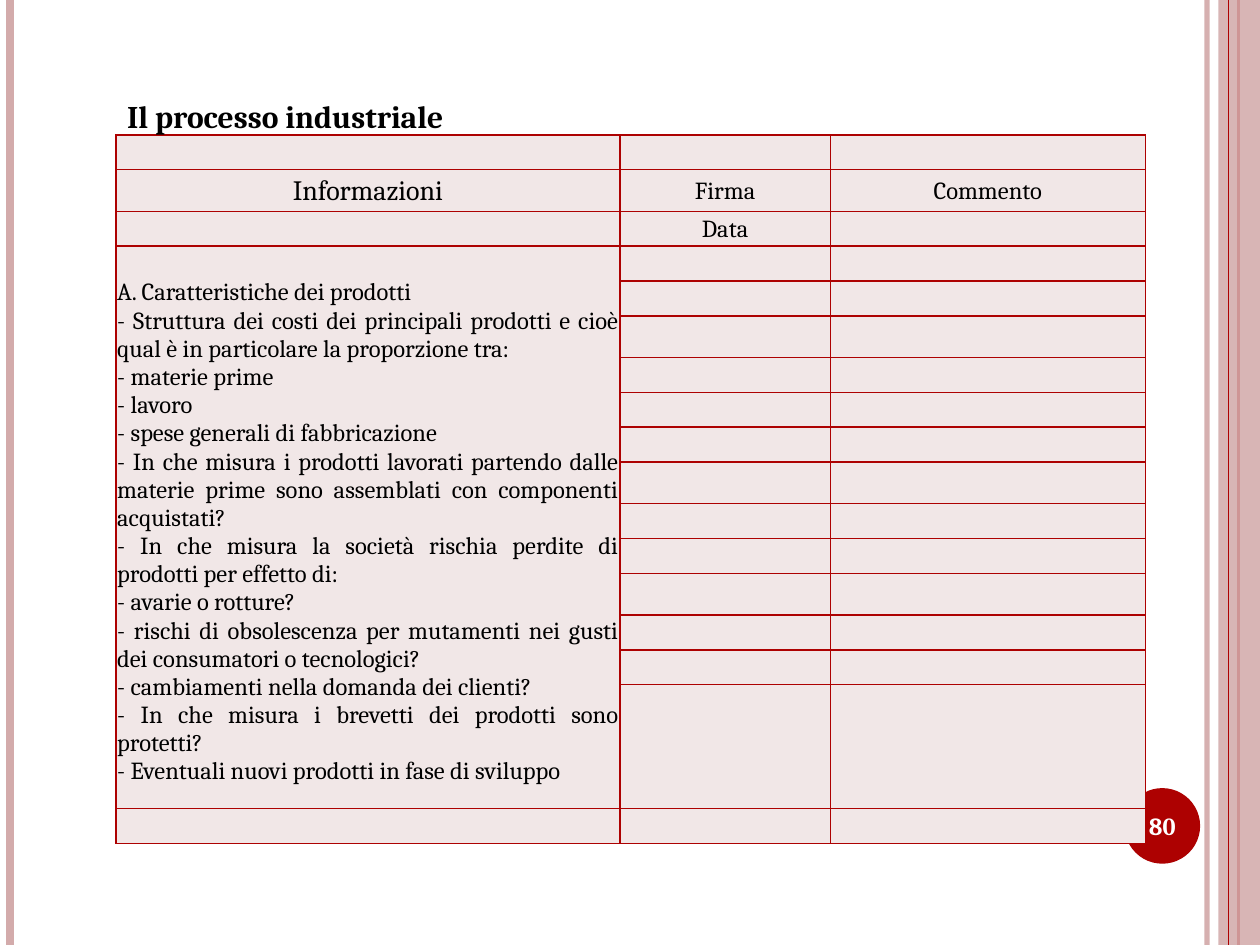
from dataclasses import dataclass

from lxml.etree import SubElement
from pptx import Presentation
from pptx.dml.color import RGBColor
from pptx.enum.shapes import MSO_CONNECTOR as Connector, MSO_SHAPE as Shape
from pptx.enum.text import MSO_ANCHOR as Anchor, MSO_AUTO_SIZE as AutoSize, PP_ALIGN as Align
from pptx.oxml.ns import qn
from pptx.util import Inches, Pt


@dataclass(frozen=True)
class Theme:
    font: str = "Cambria"
    black: str = "000000"
    white: str = "FFFFFF"
    red: str = "AD0101"
    pink: str = "D3ABAB"
    cell: str = "F1E7E7"
    title_size: int = 18
    heading_size: int = 16
    body_size: int = 14


THEME = Theme()
PAGE_WIDTH, PAGE_HEIGHT = 10, 7.5
SHORT, TALL, LAST = 0.26, 0.33, 0.9
ROW_HEIGHTS = [SHORT, TALL, SHORT, SHORT, SHORT, TALL, SHORT, SHORT, SHORT,
               TALL, SHORT, SHORT, TALL, SHORT, SHORT, LAST, SHORT]
COLUMN_WIDTHS = [4, 1.67, 2.5]
QUESTION_ROWS = (3, 15)
HEADINGS = {
    (1, 0): ("Informazioni", THEME.heading_size),
    (1, 1): ("Firma", THEME.body_size),
    (1, 2): ("Commento", THEME.body_size),
    (2, 1): ("Data", THEME.body_size),
}
QUESTIONS = [
    "A. Caratteristiche dei prodotti",
    "- Struttura dei costi dei principali prodotti e cioè qual è in particolare la proporzione tra:",
    "- materie prime",
    "- lavoro",
    "- spese generali di fabbricazione",
    "- In che misura i prodotti lavorati partendo dalle materie prime sono assemblati con componenti acquistati?",
    "- In che misura la società rischia perdite di prodotti per effetto di:",
    "- avarie o rotture?",
    "- rischi di obsolescenza per mutamenti nei gusti dei consumatori o tecnologici?",
    "- cambiamenti nella domanda dei clienti?",
    "- In che misura i brevetti dei prodotti sono protetti?",
    "- Eventuali nuovi prodotti in fase di sviluppo",
]


def rgb(color):
    return RGBColor.from_string(color)


def apply_format(target, values):
    for name, value in values.items():
        setattr(target, name, value)


def set_alpha(fill_parent, percent):
    color = next(fill_parent.iter(qn("a:srgbClr")))
    SubElement(color, qn("a:alpha"), val=str(percent * 1000))


def write(para, text, size, align, color=THEME.black, bold=False):
    para.alignment = align
    span = para.add_run()
    span.text = text
    apply_format(span.font, {"name": THEME.font, "size": Pt(size), "bold": bold})
    span.font.color.rgb = rgb(color)


def add_rule(page, x, color, width, alpha=100):
    """Draw a vertical line over the full page height."""
    rule = page.shapes.add_connector(
        Connector.STRAIGHT, Inches(x), 0, Inches(x), Inches(PAGE_HEIGHT))
    rule.line.color.rgb = rgb(color)
    rule.line.width = Pt(width)
    properties = rule.element.spPr
    if alpha < 100:
        set_alpha(properties, alpha)
    SubElement(properties, qn("a:effectLst"))


def add_solid(page, kind, box, color):
    solid = page.shapes.add_shape(kind, *map(Inches, box))
    solid.shadow.inherit = False
    solid.fill.solid()
    solid.fill.fore_color.rgb = rgb(color)
    solid.line.fill.background()
    return solid


def add_side_bands(page):
    add_rule(page, 9.58, THEME.pink, 3, alpha=93)
    add_rule(page, 0.08, THEME.pink, 4.5)
    add_rule(page, 9.83, THEME.red, 1.5)
    band = add_solid(page, Shape.RECTANGLE, (9.67, 0, 0.33, PAGE_HEIGHT), THEME.pink)
    set_alpha(band.element.spPr, 87)
    add_rule(page, 9.75, THEME.red, 0.75)


def add_page_number(page, box, number):
    left, top, width, height = box
    size = 0.6
    add_solid(page, Shape.OVAL, (left + (width - size) / 2, top + (height - size) / 2,
                                 size, size), THEME.red)
    label = page.shapes.add_textbox(*map(Inches, box))
    apply_format(label.text_frame, {"word_wrap": True, "vertical_anchor": Anchor.MIDDLE})
    write(label.text_frame.paragraphs[0], number, THEME.body_size, Align.CENTER,
          THEME.white, bold=True)


def style_cell(cell):
    properties = cell._tc.get_or_add_tcPr()
    for side in ("lnL", "lnR", "lnT", "lnB"):
        border = SubElement(properties, qn(f"a:{side}"), w=str(Pt(1)))
        SubElement(SubElement(border, qn("a:solidFill")), qn("a:srgbClr"), val=THEME.red)
    cell.fill.solid()
    cell.fill.fore_color.rgb = rgb(THEME.cell)
    edge = Inches(0.01)
    apply_format(cell, {"margin_left": edge, "margin_right": edge,
                        "margin_top": edge, "margin_bottom": 0})


def size_empty_cell(cell):
    """Give an empty cell the line height of the heading size."""
    para = cell.text_frame.paragraphs[0]._p
    end = SubElement(para, qn("a:endParaRPr"), sz=str(THEME.heading_size * 100))
    SubElement(end, qn("a:latin"), typeface=THEME.font)


def add_checklist(page, box):
    frame = page.shapes.add_table(len(ROW_HEIGHTS), len(COLUMN_WIDTHS), *map(Inches, box))
    table = frame.table
    apply_format(table, {"first_row": False, "horz_banding": False})
    for column, width in zip(table.columns, COLUMN_WIDTHS):
        column.width = Inches(width)
    first, last = QUESTION_ROWS
    for row_index, height in enumerate(ROW_HEIGHTS):
        table.rows[row_index].height = Inches(height)
        for column_index in range(len(COLUMN_WIDTHS)):
            cell = table.cell(row_index, column_index)
            style_cell(cell)
            heading = HEADINGS.get((row_index, column_index))
            if heading:
                cell.vertical_anchor = Anchor.MIDDLE
                write(cell.text_frame.paragraphs[0], *heading, Align.CENTER)
            elif column_index or not first <= row_index <= last:
                size_empty_cell(cell)

    questions = table.cell(first, 0)
    questions.merge(table.cell(last, 0))
    questions.margin_top = Inches(0.26)
    text = questions.text_frame
    for index, question in enumerate(QUESTIONS):
        para = text.add_paragraph() if index else text.paragraphs[0]
        write(para, question, THEME.body_size, Align.JUSTIFY)


def place_title(page, box, text):
    title = page.shapes.title
    places = map(Inches, box)
    apply_format(title, dict(zip(("left", "top", "width", "height"), places)))
    apply_format(title.text_frame, {"word_wrap": False, "vertical_anchor": Anchor.TOP,
                                    "auto_size": AutoSize.SHAPE_TO_FIT_TEXT})
    write(title.text_frame.paragraphs[0], text, THEME.title_size, Align.LEFT, bold=True)
    title.element.getparent().append(title.element)


def main():
    deck = Presentation()
    deck.slide_width, deck.slide_height = Inches(PAGE_WIDTH), Inches(PAGE_HEIGHT)
    page = deck.slides.add_slide(deck.slide_layouts[5])
    add_side_bands(page)
    add_page_number(page, (8.89, 6.27, 0.67, 0.57), "80")
    add_checklist(page, (0.92, 1.07, sum(COLUMN_WIDTHS), sum(ROW_HEIGHTS)))
    place_title(page, (0.91, 0.72, 3.15, 0.4), "Il processo industriale")
    deck.save("out.pptx")


if __name__ == "__main__":
    main()
